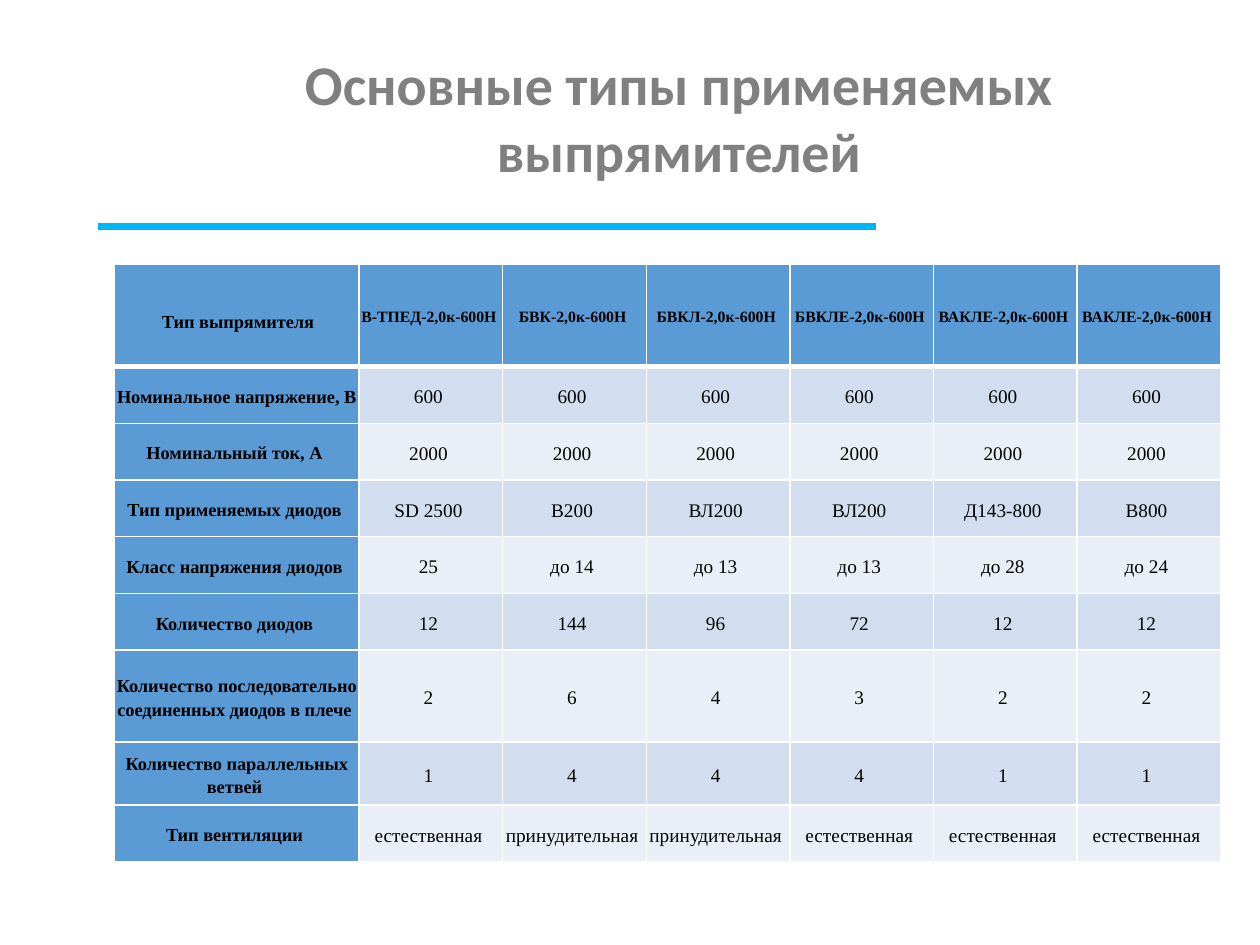
from lxml.etree import SubElement
from pptx import Presentation
from pptx.dml.color import RGBColor
from pptx.enum.shapes import MSO_CONNECTOR
from pptx.enum.text import MSO_ANCHOR, PP_ALIGN
from pptx.oxml import parse_xml
from pptx.oxml.ns import nsdecls, qn
from pptx.util import Inches, Pt

WHITE = RGBColor(0xFF, 0xFF, 0xFF)
BLACK = RGBColor(0x00, 0x00, 0x00)
GRAY = RGBColor(0x80, 0x80, 0x80)
CYAN = RGBColor(0x00, 0xB6, 0xF6)
BLUE = RGBColor(0x5B, 0x9B, 0xD5)
BANDS = [RGBColor(0xEA, 0xEF, 0xF7), RGBColor(0xD2, 0xDE, 0xEF)]

TITLE_FORMAT = {"name": "Calibri", "size": Pt(32), "bold": True}
SPACER_FORMAT = {"name": "Times New Roman", "size": Pt(16), "bold": False}
LABEL_FORMAT = {"name": "Times New Roman", "size": Pt(10.5), "bold": True}
TYPE_FORMAT = {"name": "Times New Roman", "size": Pt(9), "bold": True}
VALUE_FORMAT = {"name": "Times New Roman", "size": Pt(11), "bold": False}
CELL_FORMAT = {
    "margin_left": Inches(0.01),
    "margin_top": Inches(0.01),
    "margin_right": Inches(0.01),
    "margin_bottom": 0,
    "vertical_anchor": MSO_ANCHOR.MIDDLE,
}

COLUMN_WIDTHS = [1.94] + [1.14] * 6
ROW_HEIGHTS = [0.81] + [0.45] * 5 + [0.73, 0.5, 0.45]
RECTIFIERS = [
    ["Тип выпрямителя", "В-ТПЕД-2,0к-600Н", "БВК-2,0к-600Н", "БВКЛ-2,0к-600Н",
     "БВКЛЕ-2,0к-600Н", "ВАКЛЕ-2,0к-600Н", "ВАКЛЕ-2,0к-600Н"],
    ["Номинальное напряжение, В"] + ["600"] * 6,
    ["Номинальный ток, А"] + ["2000"] * 6,
    ["Тип применяемых диодов", "SD 2500", "В200", "ВЛ200", "ВЛ200", "Д143-800", "В800"],
    ["Класс напряжения диодов", "25", "до 14", "до 13", "до 13", "до 28", "до 24"],
    ["Количество диодов", "12", "144", "96", "72", "12", "12"],
    ["Количество последовательно соединенных диодов в плече", "2", "6", "4", "3", "2", "2"],
    ["Количество параллельных ветвей", "1", "4", "4", "4", "1", "1"],
    ["Тип вентиляции", "естественная", "принудительная", "принудительная",
     "естественная", "естественная", "естественная"],
]


def apply_format(target, values):
    for name, value in values.items():
        setattr(target, name, value)


def add_run(paragraph, text, values, color):
    run = paragraph.add_run()
    run.text = text
    apply_format(run.font, values)
    run.font.color.rgb = color


def add_title(slide, left, top, width, height):
    shape = slide.shapes.add_textbox(left, top, width, height)
    shape.text_frame.word_wrap = True
    shape.text_frame.vertical_anchor = MSO_ANCHOR.MIDDLE
    paragraph = shape.text_frame.paragraphs[0]
    paragraph.alignment = PP_ALIGN.CENTER
    add_run(paragraph, "Основные типы применяемых выпрямителей", TITLE_FORMAT, GRAY)


def add_rule(slide, left, top, width):
    connector = slide.shapes.add_connector(
        MSO_CONNECTOR.STRAIGHT, left + width, top, left, top)
    connector.line.color.rgb = CYAN
    connector.line.width = Pt(4)
    SubElement(connector._element.spPr, qn("a:effectLst"))


def set_borders(cell, row_index):
    widths = {"L": 1, "R": 1, "T": 3 if row_index == 1 else 1, "B": 3 if row_index == 0 else 1}
    properties = cell._tc.get_or_add_tcPr()
    for position, (side, width) in enumerate(widths.items()):
        properties.insert(position, parse_xml(
            f'<a:ln{side} {nsdecls("a")} w="{Pt(width)}"><a:solidFill>'
            f'<a:srgbClr val="{WHITE}"/></a:solidFill></a:ln{side}>'))


def fill_cell(cell, text, row_index, column_index):
    apply_format(cell, CELL_FORMAT)
    is_heading = row_index == 0 or column_index == 0
    cell.fill.solid()
    cell.fill.fore_color.rgb = BLUE if is_heading else BANDS[row_index % 2]
    set_borders(cell, row_index)
    paragraph = cell.text_frame.paragraphs[0]
    paragraph.alignment = PP_ALIGN.CENTER
    paragraph.line_spacing = 1.15
    if row_index == column_index == 0:
        add_run(paragraph, " ", SPACER_FORMAT, BLACK)
    if column_index == 0:
        values = LABEL_FORMAT
    else:
        values = TYPE_FORMAT if row_index == 0 else VALUE_FORMAT
    add_run(paragraph, text + " ", values, BLACK)


def add_rectifier_table(slide, left, top, width, height):
    table = slide.shapes.add_table(
        len(ROW_HEIGHTS), len(COLUMN_WIDTHS), left, top, width, height).table
    for column, column_width in zip(table.columns, COLUMN_WIDTHS):
        column.width = Inches(column_width)
    for row, row_height in zip(table.rows, ROW_HEIGHTS):
        row.height = Inches(row_height)
    for row_index, texts in enumerate(RECTIFIERS):
        for column_index, text in enumerate(texts):
            fill_cell(table.cell(row_index, column_index), text, row_index, column_index)


def main():
    presentation = Presentation()
    presentation.slide_width = Inches(10)
    presentation.slide_height = Inches(7.5)
    slide = presentation.slides.add_slide(presentation.slide_layouts[6])
    add_rule(slide, Inches(0.78), Inches(1.8), Inches(6.17))
    add_title(slide, Inches(0.86), Inches(0.3), Inches(9.06), Inches(1.25))
    add_rectifier_table(slide, Inches(0.91), Inches(2.1), Inches(8.78), Inches(4.72))
    presentation.save("out.pptx")


if __name__ == "__main__":
    main()
